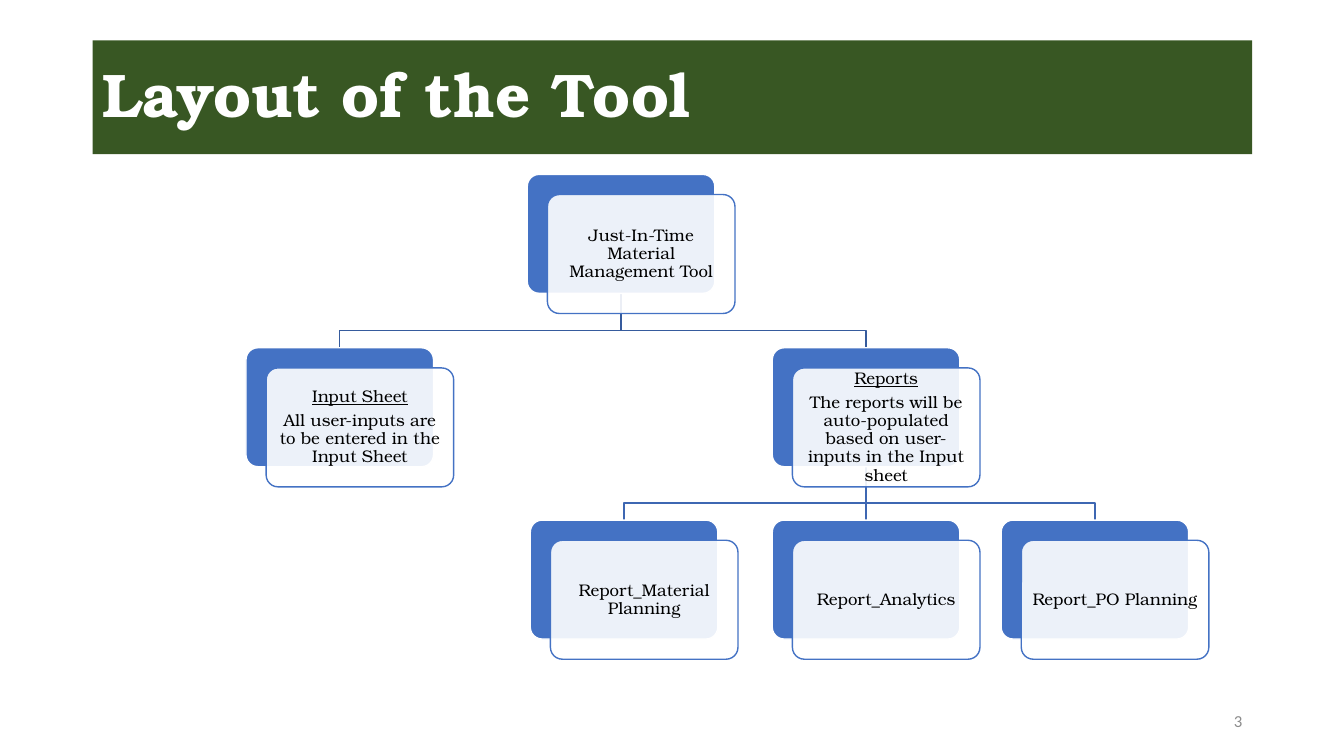
from dataclasses import dataclass

from lxml import etree
from pptx import Presentation
from pptx.dml.color import RGBColor
from pptx.enum import shapes, text
from pptx.oxml import ns
from pptx.util import Inches, Pt


@dataclass(frozen=True)
class Theme:
    banner: str = "385723"
    blue: str = "4472C4"
    upper_link: str = "365B9D"
    lower_link: str = "3E67B2"
    white: str = "FFFFFF"
    black: str = "000000"
    grey: str = "8C8C8C"
    serif: str = "TeX Gyre Bonum"
    sans: str = "Calibri"
    title_size: int = 44
    body_size: int = 12
    line_width: int = 1


@dataclass(frozen=True)
class Box:
    left: float
    top: float
    width: float
    height: float

    def moved(self, right, down):
        return Box(self.left + right, self.top + down, self.width, self.height)

    def lengths(self):
        return [Inches(side) for side in (self.left, self.top, self.width, self.height)]


THEME = Theme()
CARD_WIDTH, CARD_HEIGHT = 1.86, 1.18
CARD_SHIFT = 0.2
LINK_MARGIN = 0.17
TOP_ROW, MIDDLE_ROW, BOTTOM_ROW = 1.73, 3.45, 5.16
NODES = {
    "tool": (5.23, TOP_ROW, ["Just-In-Time Material Management Tool"]),
    "input": (2.44, MIDDLE_ROW, [
        "Input Sheet", "All user-inputs are to be entered in the Input Sheet"]),
    "reports": (7.66, MIDDLE_ROW, [
        "Reports",
        "The reports will be auto-populated based on user-inputs in the Input sheet"]),
    "material": (5.26, BOTTOM_ROW, ["Report_Material Planning"]),
    "analytics": (7.66, BOTTOM_ROW, ["Report_Analytics"]),
    "orders": (9.93, BOTTOM_ROW, ["Report_PO Planning"]),
}
LINKS = [
    ("reports", "orders", THEME.lower_link),
    ("reports", "analytics", THEME.lower_link),
    ("reports", "material", THEME.lower_link),
    ("tool", "reports", THEME.upper_link),
    ("tool", "input", THEME.upper_link),
]


def rgb(color):
    return RGBColor.from_string(color)


def write(para, words, *, font=THEME.serif, size=THEME.body_size, color=THEME.black,
          bold=False, underline=False, align=text.PP_ALIGN.LEFT, spacing=0.9, after=0):
    para.alignment = align
    para.line_spacing = spacing
    para.space_after = Pt(after)
    span = para.add_run()
    span.text = words
    span.font.name = font
    span.font.size = Pt(size)
    span.font.color.rgb = rgb(color)
    span.font.bold = bold
    span.font.underline = underline


def prepare_frame(shape, inset=None):
    frame = shape.text_frame
    frame.word_wrap = True
    frame.vertical_anchor = text.MSO_ANCHOR.MIDDLE
    if inset is not None:
        frame.margin_left = frame.margin_right = Inches(inset)
        frame.margin_top = frame.margin_bottom = Inches(inset)
    return frame


def add_title(page, box):
    banner = page.shapes.add_shape(shapes.MSO_SHAPE.RECTANGLE, *box.lengths())
    banner.shadow.inherit = False
    banner.fill.solid()
    banner.fill.fore_color.rgb = rgb(THEME.banner)
    banner.line.fill.background()
    write(prepare_frame(banner).paragraphs[0], "Layout of the Tool",
          size=THEME.title_size, color=THEME.white, bold=True)


def add_page_number(page, box):
    label = page.shapes.add_textbox(*box.lengths())
    write(prepare_frame(label).paragraphs[0], "3", font=THEME.sans,
          color=THEME.grey, align=text.PP_ALIGN.RIGHT, spacing=1.0)


def add_card(page, box, fill, line, opacity=100):
    card = page.shapes.add_shape(shapes.MSO_SHAPE.ROUNDED_RECTANGLE, *box.lengths())
    card.adjustments[0] = 0.1
    card.shadow.inherit = False
    card.fill.solid()
    card.fill.fore_color.rgb = rgb(fill)
    if opacity < 100:
        color = card.fill._xPr.find(".//" + ns.qn("a:srgbClr"))
        etree.SubElement(color, ns.qn("a:alpha"), val=str(opacity * 1000))
    card.line.color.rgb = rgb(line)
    card.line.width = Pt(THEME.line_width)
    return card


def add_node(page, box, lines):
    add_card(page, box, THEME.blue, THEME.white)
    front = add_card(page, box.moved(CARD_SHIFT, CARD_SHIFT),
                     THEME.white, THEME.blue, opacity=90)
    frame = prepare_frame(front, inset=0.05)
    for index, words in enumerate(lines):
        para = frame.add_paragraph() if index else frame.paragraphs[0]
        heading = index == 0 and len(lines) > 1
        write(para, words, underline=heading, align=text.PP_ALIGN.CENTER,
              after=0.35 * THEME.body_size)


def add_link(page, parent, child, color):
    start_x, end_x = (Inches(box.left + box.width / 2) for box in (parent, child))
    start_y = Inches(parent.top + parent.height)
    bend_y, end_y = Inches(child.top - LINK_MARGIN), Inches(child.top)
    if start_x == end_x:
        link = page.shapes.add_connector(
            shapes.MSO_CONNECTOR.STRAIGHT, start_x, start_y, end_x, end_y)
        etree.SubElement(link._element.spPr, ns.qn("a:effectLst"))
    else:
        route = page.shapes.build_freeform(start_x, start_y)
        route.add_line_segments(
            [(start_x, bend_y), (end_x, bend_y), (end_x, end_y)], close=False)
        link = route.convert_to_shape()
        link.shadow.inherit = False
        link.fill.background()
    link.line.color.rgb = rgb(color)
    link.line.width = Pt(THEME.line_width)


def add_hierarchy(page, origin):
    boxes = {
        name: Box(left, top, CARD_WIDTH, CARD_HEIGHT).moved(*origin)
        for name, (left, top, _) in NODES.items()
    }
    for parent, child, color in LINKS:
        add_link(page, boxes[parent], boxes[child], color)
    for name, (_, _, lines) in NODES.items():
        add_node(page, boxes[name], lines)


def main():
    deck = Presentation()
    deck.slide_width, deck.slide_height = Inches(13.33), Inches(7.5)
    page = deck.slides.add_slide(deck.slide_layouts[6])
    add_title(page, Box(0.92, 0.4, 11.5, 1.13))
    add_page_number(page, Box(9.42, 6.95, 3, 0.4))
    add_hierarchy(page, (0, 0))
    deck.save("out.pptx")


if __name__ == "__main__":
    main()
